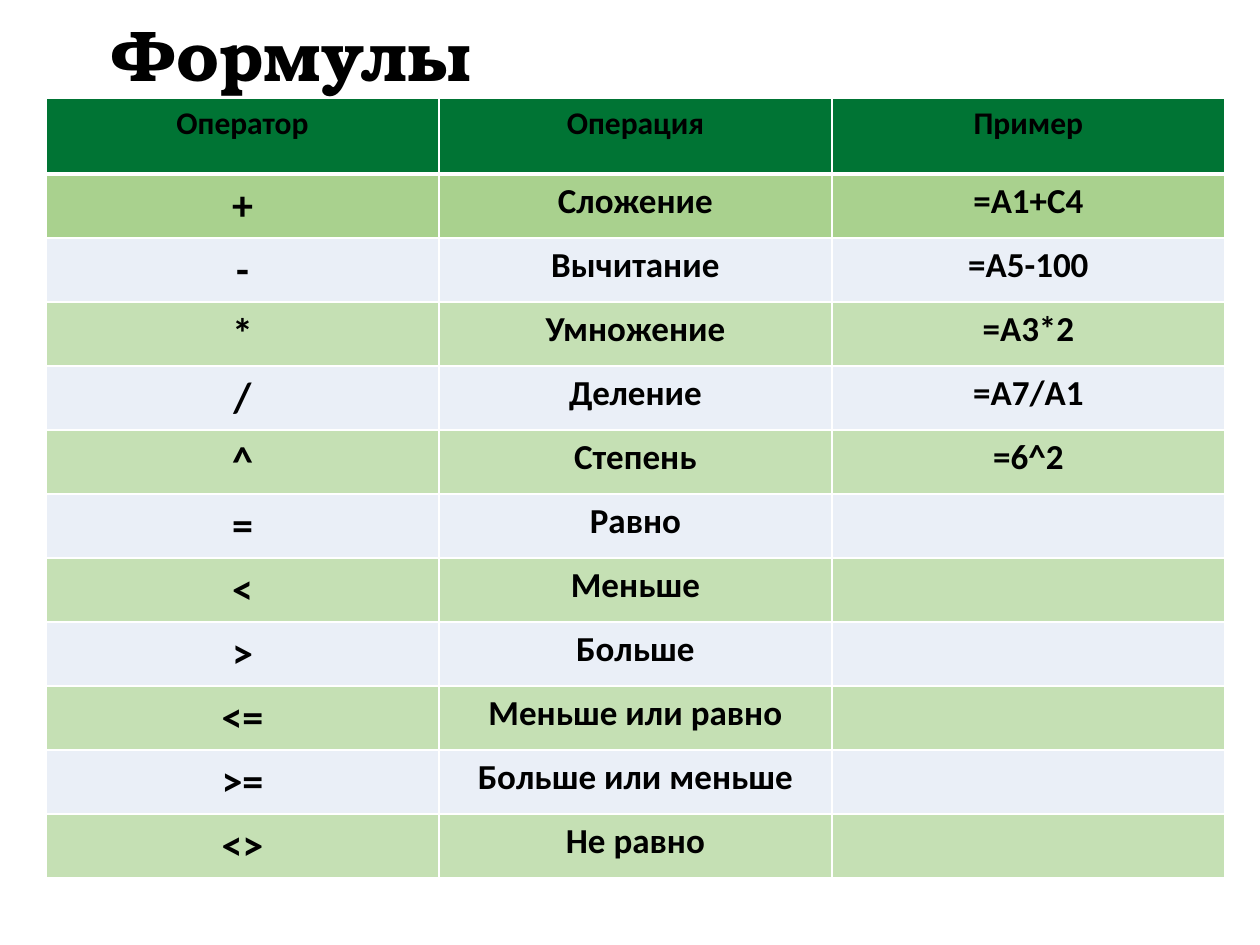
import pptx
import pptx.util
import pptx.dml.color
import pptx.enum.text
import lxml.etree
from pptx.oxml.ns import qn

EMU_PER_PX = 914400 / 126

BLACK = pptx.dml.color.RGBColor(0x00, 0x00, 0x00)
WHITE = pptx.dml.color.RGBColor(0xFF, 0xFF, 0xFF)
DARK_GREEN = pptx.dml.color.RGBColor(0x00, 0x74, 0x34)
MID_GREEN = pptx.dml.color.RGBColor(0xA9, 0xD1, 0x8E)
PALE_GREEN = pptx.dml.color.RGBColor(0xC5, 0xE0, 0xB4)
PALE_BLUE = pptx.dml.color.RGBColor(0xEA, 0xEF, 0xF7)

CENTER = pptx.enum.text.PP_ALIGN.CENTER
LEFT = pptx.enum.text.PP_ALIGN.LEFT

COLUMN_WIDTH = 393
HEADER_HEIGHT = 76
ROW_HEIGHT = 64

HEADER = ("Оператор", "Операция", "Пример")
OPERATORS = [
    ("+", "Сложение", "=А1+С4"),
    ("-", "Вычитание", "=А5-100"),
    ("*", "Умножение", "=А3*2"),
    ("/", "Деление", "=А7/А1"),
    ("^", "Степень", "=6^2"),
    ("=", "Равно", ""),
    ("<", "Меньше", ""),
    (">", "Больше", ""),
    ("<=", "Меньше или равно", ""),
    (">=", "Больше или меньше", ""),
    ("<>", "Не равно", ""),
]


def px(length):
    return pptx.util.Emu(round(length * EMU_PER_PX))


def write(frame, text, size=18, font="Calibri", color=BLACK, align=CENTER, spacing=1.0):
    para = frame.paragraphs[0]
    para.alignment = align
    para.line_spacing = spacing
    span = para.add_run()
    span.text = text
    span.font.size = pptx.util.Pt(size)
    span.font.name = font
    span.font.bold = True
    span.font.color.rgb = color


def add_title(slide, text):
    title = slide.shapes.title
    title.left, title.top, title.width, title.height = px(98), px(28), px(1062), px(62)
    frame = title.text_frame
    frame.word_wrap = True
    frame.auto_size = pptx.enum.text.MSO_AUTO_SIZE.NONE
    frame.vertical_anchor = pptx.enum.text.MSO_ANCHOR.MIDDLE
    write(frame, text, size=39.6, font="TeX Gyre Bonum", align=LEFT, spacing=0.9)


def set_borders(cell, top=1, bottom=1):
    """Draw white cell borders; widths are in points."""
    properties = cell._tc.get_or_add_tcPr()
    widths = {"a:lnL": 1, "a:lnR": 1, "a:lnT": top, "a:lnB": bottom}
    for index, (tag, width) in enumerate(widths.items()):
        line = lxml.etree.Element(qn(tag), w=str(pptx.util.Pt(width)))
        fill = lxml.etree.SubElement(line, qn("a:solidFill"))
        lxml.etree.SubElement(fill, qn("a:srgbClr"), val=str(WHITE))
        properties.insert(index, line)


def row_color(index):
    if index == 0:
        return DARK_GREEN
    if index == 1:
        return MID_GREEN
    return PALE_GREEN if index % 2 else PALE_BLUE


def add_operator_table(slide):
    rows = [HEADER, *OPERATORS]
    height = HEADER_HEIGHT + ROW_HEIGHT * len(OPERATORS)
    table = slide.shapes.add_table(
        len(rows), len(HEADER), px(46), px(98), px(COLUMN_WIDTH * len(HEADER)), px(height)
    ).table
    for column in table.columns:
        column.width = px(COLUMN_WIDTH)
    for row_index, texts in enumerate(rows):
        is_header = row_index == 0
        table.rows[row_index].height = px(HEADER_HEIGHT if is_header else ROW_HEIGHT)
        sizes = (18, 18, 18) if is_header else (24, 20, 20)
        for column_index, (text, size) in enumerate(zip(texts, sizes)):
            cell = table.cell(row_index, column_index)
            cell.fill.solid()
            cell.fill.fore_color.rgb = row_color(row_index)
            set_borders(cell, top=3 if row_index == 1 else 1, bottom=3 if is_header else 1)
            if text:
                write(cell.text_frame, text, size=size)


def main():
    deck = pptx.Presentation()
    deck.slide_width, deck.slide_height = px(1260), px(945)
    slide = deck.slides.add_slide(deck.slide_layouts.get_by_name("Title Only"))
    add_title(slide, "Формулы")
    add_operator_table(slide)
    deck.save("out.pptx")


if __name__ == "__main__":
    main()
